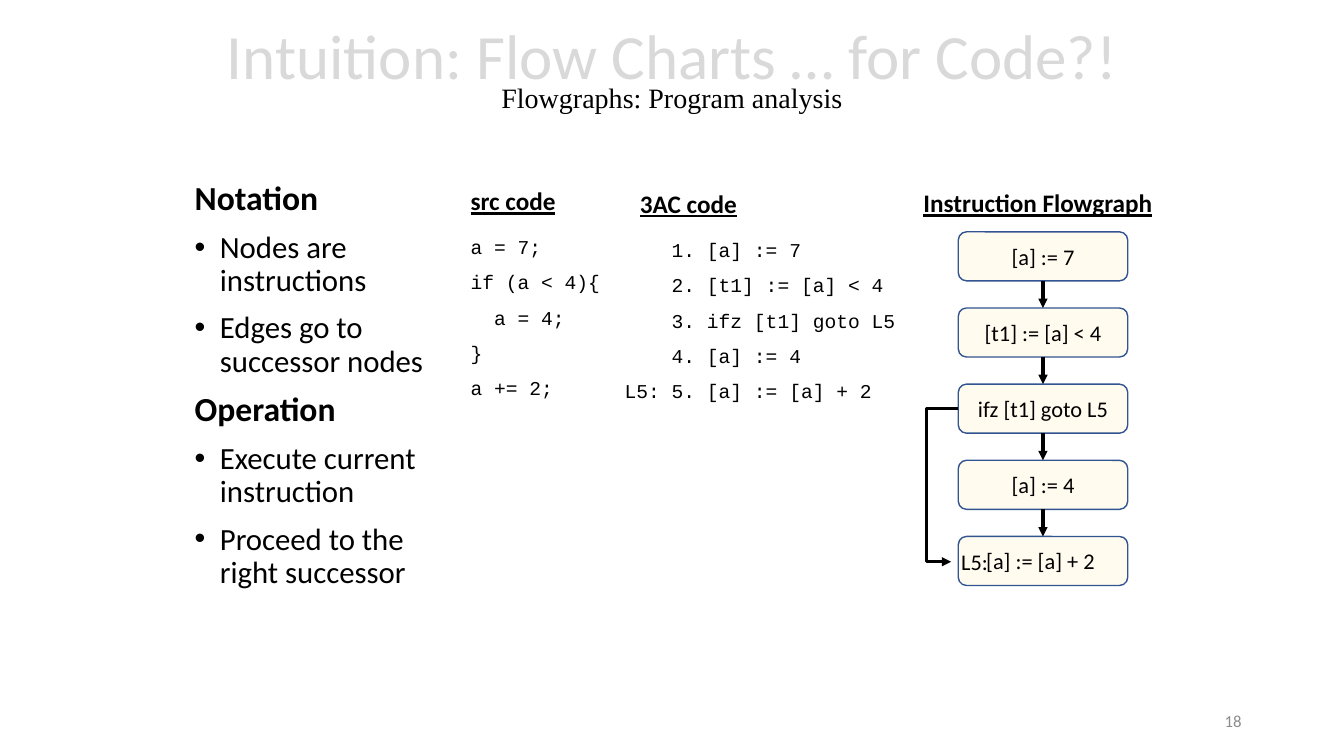
"""Build a slide that explains instruction flowgraphs for program analysis."""
from dataclasses import dataclass

import lxml.etree
import pptx
import pptx.dml.color
import pptx.enum.shapes
import pptx.enum.text
import pptx.oxml.ns
import pptx.util

Pt = pptx.util.Pt
ALIGN = pptx.enum.text.PP_ALIGN
ANCHOR = pptx.enum.text.MSO_ANCHOR
FIT = pptx.enum.text.MSO_AUTO_SIZE
SHAPE = pptx.enum.shapes.MSO_SHAPE
CONNECTOR = pptx.enum.shapes.MSO_CONNECTOR


@dataclass(frozen=True)
class Theme:
    """Hold the fonts, colours and type sizes of the slide."""
    sans: str = "Calibri"
    serif: str = "Times New Roman"
    mono: str = "Courier New"
    ink: str = "000000"
    pale: str = "D9D9D9"
    muted: str = "8C8C8C"
    node_fill: str = "FFF2CC"
    node_line: str = "325491"
    title: float = 45
    subtitle: float = 20
    section: float = 24
    bullet: float = 22
    heading: float = 18
    node: float = 16
    code: float = 14
    number: float = 12


THEME = Theme()
SOURCE_CODE = ["a = 7;", "if (a < 4){", "  a = 4;", "}", "a += 2;"]
THREE_ADDRESS_CODE = [
    "    1. [a] := 7",
    "    2. [t1] := [a] < 4",
    "    3. ifz [t1] goto L5",
    "    4. [a] := 4",
    "L5: 5. [a] := [a] + 2",
]
INSTRUCTIONS = ["[a] := 7", "[t1] := [a] < 4", "ifz [t1] goto L5", "[a] := 4", "[a] := [a] + 2 "]
NOTES = {
    "Notation": ["Nodes are instructions", "Edges go to successor nodes"],
    "Operation": ["Execute current instruction", "Proceed to the right successor"],
}
NODE_LEFT, NODE_TOP, NODE_WIDTH, NODE_HEIGHT, NODE_PITCH = 684.5, 165.6, 121, 35, 54.4
JUMP_REACH = 23


def colour(value):
    """Turn a hex string into a colour."""
    return pptx.dml.color.RGBColor.from_string(value)


def add_xml(parent, tag, **attributes):
    """Append a drawing element to a parent element."""
    return lxml.etree.SubElement(parent, pptx.oxml.ns.qn(tag), attributes)


def add_span(para, text, size, font=THEME.sans, ink=THEME.ink, bold=False, underline=False):
    """Add one formatted run to a paragraph."""
    span = para.add_run()
    span.text = text
    span.font.name = font
    span.font.size = Pt(size)
    span.font.bold = bold
    span.font.underline = underline
    span.font.color.rgb = colour(ink)


def add_box(page, left, top, width, height, wrap=False):
    """Add an empty text box."""
    box = page.shapes.add_textbox(Pt(left), Pt(top), Pt(width), Pt(height))
    box.text_frame.word_wrap = wrap
    box.text_frame.auto_size = FIT.NONE if wrap else FIT.SHAPE_TO_FIT_TEXT
    return box


def next_para(frame):
    """Return the unused first paragraph of a frame, or a new one."""
    first = frame.paragraphs[0]
    return frame.add_paragraph() if first.runs else first


def add_title(page):
    """Place the title and its subtitle in the title placeholder."""
    box = page.shapes.title
    box.left, box.top, box.width, box.height = Pt(120), Pt(1.5), Pt(720), Pt(104.5)
    frame = box.text_frame
    frame.auto_size = FIT.NONE
    frame.vertical_anchor = ANCHOR.MIDDLE
    para = frame.paragraphs[0]
    para.alignment = ALIGN.CENTER
    para.line_spacing = 0.7
    add_span(para, "Intuition: Flow Charts … for Code?!", THEME.title, ink=THEME.pale)
    para.add_line_break()
    add_span(para, "Flowgraphs: Program analysis", THEME.subtitle, THEME.serif)


def add_note_para(frame, text, bulleted):
    """Add a bold section name or a bulleted note."""
    para = next_para(frame)
    para.line_spacing = 0.9
    para.space_before = Pt(10)
    add_span(para, text, THEME.bullet if bulleted else THEME.section, bold=not bulleted)
    if bulleted:
        properties = para._p.get_or_add_pPr()
        properties.set("marL", str(Pt(18)))
        properties.set("indent", str(-Pt(18)))
        add_xml(properties, "a:buFont", typeface="Arial")
        add_xml(properties, "a:buChar", char="•")


def add_notes_box(page):
    """Add the column of notation and operation notes."""
    frame = add_box(page, 132, 126, 180, 356, wrap=True).text_frame
    for section, notes in NOTES.items():
        add_note_para(frame, section, False)
        for note in notes:
            add_note_para(frame, note, True)


def add_heading(page, text, left, top, width):
    """Add an underlined column heading."""
    box = add_box(page, left, top, width, 29)
    add_span(box.text_frame.paragraphs[0], text, THEME.heading, bold=True, underline=True)


def add_code(page, lines, left, top, width):
    """Add a code listing with one paragraph per line."""
    frame = add_box(page, left, top, width, 132.5).text_frame
    for line in lines:
        para = next_para(frame)
        para.line_spacing = 1.5
        add_span(para, line, THEME.code, THEME.mono)


def add_node(page, text, top):
    """Add one instruction node of the flowgraph."""
    node = page.shapes.add_shape(
        SHAPE.ROUNDED_RECTANGLE, Pt(NODE_LEFT), Pt(top), Pt(NODE_WIDTH), Pt(NODE_HEIGHT))
    node.shadow.inherit = False
    node.fill.solid()
    node.fill.fore_color.rgb = colour(THEME.node_fill)
    shade = node._element.spPr.find(".//" + pptx.oxml.ns.qn("a:srgbClr"))
    add_xml(shade, "a:alpha", val="30000")
    node.line.color.rgb = colour(THEME.node_line)
    node.line.width = Pt(1)
    node.text_frame.vertical_anchor = ANCHOR.MIDDLE
    para = node.text_frame.paragraphs[0]
    para.alignment = ALIGN.CENTER
    add_span(para, text, THEME.node)
    return node


def add_edge(page, kind, start, start_side, end, end_side):
    """Join two shapes with an arrow."""
    edge = page.shapes.add_connector(kind, 0, 0, 0, 0)
    edge.begin_connect(start, start_side)
    edge.end_connect(end, end_side)
    edge.line.color.rgb = colour(THEME.ink)
    edge.line.width = Pt(2.25)
    add_xml(edge.line._get_or_add_ln(), "a:tailEnd", type="triangle")
    add_xml(edge._element.spPr, "a:effectLst")
    return edge


def add_flowgraph(page):
    """Add the nodes, the edges between them and the jump to L5."""
    nodes = [add_node(page, text, NODE_TOP + row * NODE_PITCH)
             for row, text in enumerate(INSTRUCTIONS)]
    for start, end in zip(nodes, nodes[1:]):
        add_edge(page, CONNECTOR.STRAIGHT, start, 2, end, 0)
    label = add_box(page, 679.5, 388, 34, 26.5)
    add_span(label.text_frame.paragraphs[0], "L5:", THEME.node)
    jump = add_edge(page, CONNECTOR.ELBOW, nodes[2], 1, label, 1)
    bend = round(100000 * Pt(JUMP_REACH) / jump.width)
    guides = jump._element.spPr.find(pptx.oxml.ns.qn("a:prstGeom")).get_or_add_avLst()
    add_xml(guides, "a:gd", name="adj1", fmla=f"val {bend}")


def add_page_number(page):
    """Add the page number at the lower right."""
    box = add_box(page, 678, 500.5, 216, 28.75, wrap=True)
    box.text_frame.vertical_anchor = ANCHOR.MIDDLE
    para = box.text_frame.paragraphs[0]
    para.alignment = ALIGN.RIGHT
    add_span(para, "18", THEME.number, ink=THEME.muted)


def main():
    """Build and save the deck."""
    deck = pptx.Presentation()
    deck.slide_width, deck.slide_height = Pt(960), Pt(540)
    page = deck.slides.add_slide(deck.slide_layouts.get_by_name("Title Only"))
    add_title(page)
    add_notes_box(page)
    add_heading(page, "src code", 329, 129, 75.5)
    add_code(page, SOURCE_CODE, 329, 156, 107)
    add_heading(page, "3AC code", 450, 131, 84)
    add_code(page, THREE_ADDRESS_CODE, 439, 158, 209)
    add_heading(page, "Instruction Flowgraph", 652.5, 130.5, 179)
    add_flowgraph(page)
    add_page_number(page)
    deck.save("out.pptx")


if __name__ == "__main__":
    main()
